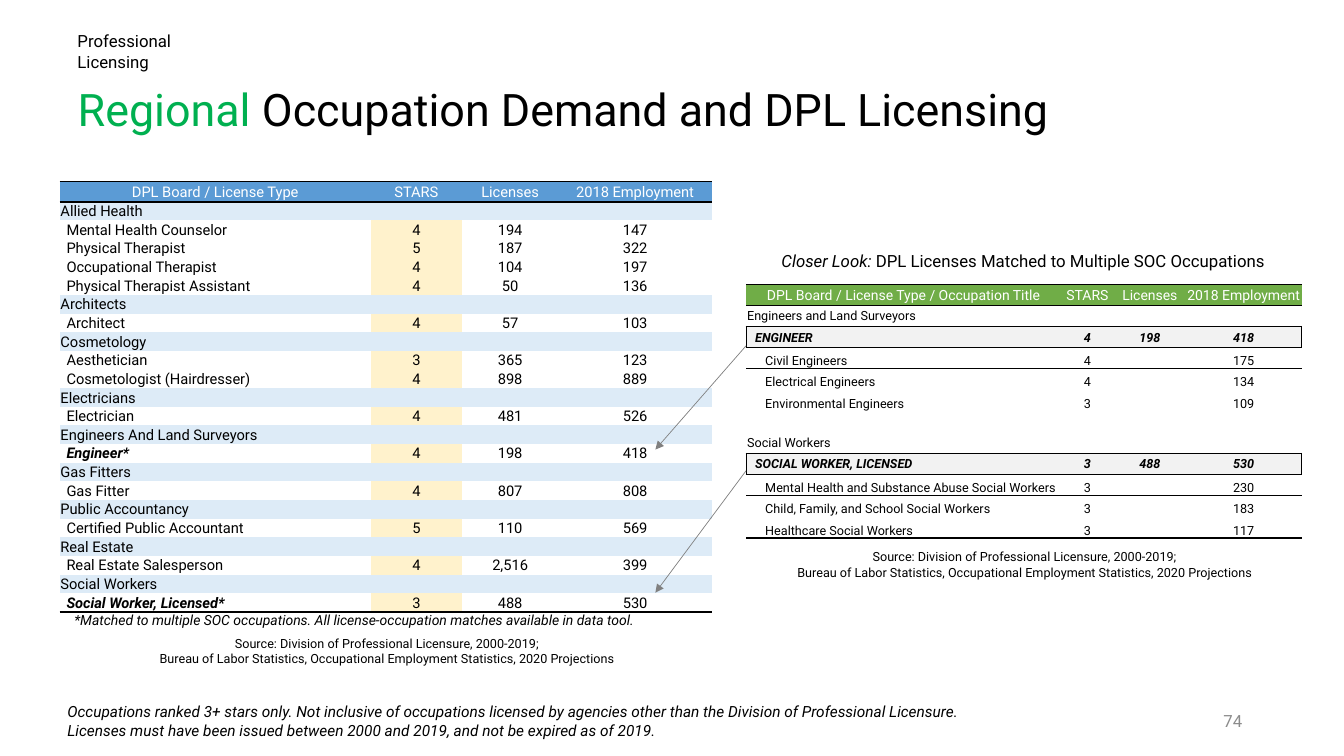
import lxml.etree
import pptx
import pptx.dml.color
import pptx.enum.shapes
import pptx.enum.text
import pptx.oxml.ns
import pptx.util

Inches = pptx.util.Inches
ALIGN = pptx.enum.text.PP_ALIGN
ANCHOR = pptx.enum.text.MSO_ANCHOR
FONT = "Roboto"
COLORS = {
    "black": "000000", "white": "FFFFFF", "highlight": "00B050", "number": "8C8C8C",
    "blue": "5B9BD5", "band": "DDEBF7", "stars": "FFF2CC", "green": "70AD47",
    "match": "F2F2F2", "arrow": "808080",
}
NO_STYLE = "{2D5ABB26-0587-4C30-8999-92F81FD0307C}"
SOURCE = [
    "Source: Division of Professional Licensure, 2000-2019;",
    "Bureau of Labor Statistics, Occupational Employment Statistics, 2020 Projections",
]
NOTES = [
    "Occupations ranked 3+ stars only. Not inclusive of occupations licensed by agencies "
    "other than the Division of Professional Licensure.",
    "Licenses must have been issued between 2000 and 2019, and not be expired as of 2019.",
]
BOARDS = {
    "Allied Health": [
        ("Mental Health Counselor", "4", "194", "147"),
        ("Physical Therapist", "5", "187", "322"),
        ("Occupational Therapist", "4", "104", "197"),
        ("Physical Therapist Assistant", "4", "50", "136"),
    ],
    "Architects": [("Architect", "4", "57", "103")],
    "Cosmetology": [
        ("Aesthetician", "3", "365", "123"),
        ("Cosmetologist (Hairdresser)", "4", "898", "889"),
    ],
    "Electricians": [("Electrician", "4", "481", "526")],
    "Engineers And Land Surveyors": [("Engineer*", "4", "198", "418")],
    "Gas Fitters": [("Gas Fitter", "4", "807", "808")],
    "Public Accountancy": [("Certified Public Accountant", "5", "110", "569")],
    "Real Estate": [("Real Estate Salesperson", "4", "2,516", "399")],
    "Social Workers": [("Social Worker, Licensed*", "3", "488", "530")],
}
CLOSER_ROWS = [
    ("header", "DPL Board / License Type / Occupation Title", "STARS", "Licenses", "2018 Employment"),
    ("group", "Engineers and Land Surveyors", "", "", ""),
    ("match", "ENGINEER", "4", "198", "418"),
    ("ruled", "Civil Engineers", "4", "", "175"),
    ("detail", "Electrical Engineers", "4", "", "134"),
    ("detail", "Environmental Engineers", "3", "", "109"),
    ("detail", "", "", "", ""),
    ("group", "Social Workers", "", "", ""),
    ("match", "SOCIAL WORKER, LICENSED", "3", "488", "530"),
    ("ruled", "Mental Health and Substance Abuse Social Workers", "3", "", "230"),
    ("detail", "Child, Family, and School Social Workers", "3", "", "183"),
    ("ruled", "Healthcare Social Workers", "3", "", "117"),
]


def rgb(name):
    return pptx.dml.color.RGBColor.from_string(COLORS[name])


def set_font(font, size, color="black", bold=False, italic=False):
    font.name, font.size = FONT, pptx.util.Pt(size)
    font.bold, font.italic = bold, italic
    font.color.rgb = rgb(color)


def add_text(page, box, lines, size, align=ALIGN.LEFT, color="black", italic=False):
    frame = page.shapes.add_textbox(*map(Inches, box)).text_frame
    frame.word_wrap = True
    frame.text = "\n".join(lines)
    for para in frame.paragraphs:
        para.alignment = align
        set_font(para.font, size, color, italic=italic)
    return frame


def add_borders(cell, sides, width):
    properties = cell._tc.get_or_add_tcPr()
    for index, side in enumerate("LRTB"):
        line = lxml.etree.Element(pptx.oxml.ns.qn(f"a:ln{side}"))
        if side in sides:
            line.set("w", str(pptx.util.Pt(width)))
            fill = lxml.etree.SubElement(line, pptx.oxml.ns.qn("a:solidFill"))
            lxml.etree.SubElement(fill, pptx.oxml.ns.qn("a:srgbClr"), val=COLORS["black"])
        else:
            line.set("w", "0")
            lxml.etree.SubElement(line, pptx.oxml.ns.qn("a:noFill"))
        properties.insert(index, line)


def fill_cell(cell, text, size, align, fill=None, indent=0.01, anchor=ANCHOR.MIDDLE,
              color="black", emphasis=False):
    cell.margin_left, cell.margin_right = Inches(indent), Inches(0.01)
    cell.margin_top, cell.margin_bottom = Inches(0.01), 0
    cell.vertical_anchor = anchor
    if fill:
        cell.fill.solid()
        cell.fill.fore_color.rgb = rgb(fill)
    else:
        cell.fill.background()
    para = cell.text_frame.paragraphs[0]
    para.alignment = align
    set_font(para.font, size, color, emphasis, emphasis)
    if text:
        para.add_run().text = text
    else:
        lxml.etree.SubElement(para._p, pptx.oxml.ns.qn("a:endParaRPr"), sz=str(size * 100).split(".")[0])


def add_grid(page, left, top, widths, heights, rows):
    box = map(Inches, (left, top, sum(widths), sum(heights)))
    frame = page.shapes.add_table(len(rows), len(widths), *box)
    table = frame.table
    table.first_row = table.horz_banding = False
    table._tbl.tblPr.find(pptx.oxml.ns.qn("a:tableStyleId")).text = NO_STYLE
    for column, width in zip(table.columns, widths):
        column.width = Inches(width)
    for row, height in zip(table.rows, heights):
        row.height = Inches(height)
    return table


def board_table(page, left, top):
    rows = [("header", "DPL Board / License Type", "STARS", "Licenses", "2018 Employment")]
    for board, licenses in BOARDS.items():
        rows.append(("group", board, "", "", ""))
        rows += [("license", *values) for values in licenses]
    heights = [0.2] + [4.02 / (len(rows) - 1)] * (len(rows) - 1)
    table = add_grid(page, left, top, [3.09, 0.9, 0.96, 1.52], heights, rows)
    for r, (kind, *values) in enumerate(rows):
        sides = "TB" if kind == "header" else "B" if r == len(rows) - 1 else ""
        for c, text in enumerate(values):
            fill = {"header": "blue", "group": "band"}.get(kind, "stars" if c == 1 else None)
            fill_cell(
                table.cell(r, c), text, 10.5,
                ALIGN.CENTER if c or kind == "header" else ALIGN.LEFT, fill,
                indent=0.07 if kind == "license" and c == 0 else 0.01,
                color="white" if kind == "header" else "black",
                emphasis=text.endswith("*"))
            add_borders(table.cell(r, c), sides, 1.5)


def closer_table(page, left, top):
    table = add_grid(page, left, top, [3.12, 0.53, 0.71, 1.15], [0.21] * len(CLOSER_ROWS), CLOSER_ROWS)
    indents = {"match": 0.09, "detail": 0.19, "ruled": 0.19}
    for r, (kind, *values) in enumerate(CLOSER_ROWS):
        for c, text in enumerate(values):
            fill_cell(
                table.cell(r, c), text, 10 if kind == "header" else 9,
                ALIGN.CENTER if c or kind == "header" else ALIGN.LEFT,
                {"header": "green", "match": "match"}.get(kind),
                indent=0.01 if c else indents.get(kind, 0.01),
                anchor=ANCHOR.BOTTOM if kind in ("detail", "ruled") else ANCHOR.MIDDLE,
                color="white" if kind == "header" else "black",
                emphasis=kind == "match")
            sides = {"header": "TB", "match": "TB", "ruled": "B"}.get(kind, "")
            if kind == "match":
                sides += {0: "L", 3: "R"}.get(c, "")
            add_borders(table.cell(r, c), sides, 1)


def heading(page, left, top):
    add_text(page, (left, top, 1.8, 0.3), ["Professional Licensing"], 12)
    title = page.shapes.title
    title.left, title.top, title.width, title.height = map(Inches, (left, top + 0.41, 12, 0.88))
    title.text_frame.vertical_anchor = ANCHOR.MIDDLE
    para = title.text_frame.paragraphs[0]
    para.alignment, para.line_spacing = ALIGN.LEFT, 0.9
    for text, color in (("Regional ", "highlight"), ("Occupation Demand and DPL Licensing", "black")):
        span = para.add_run()
        span.text = text
        set_font(span.font, 32, color)


def board_region(page, left, top):
    board_table(page, left, top)
    add_text(page, (left + 0.05, top + 4.22, 6.36, 0.27),
             ["*Matched to multiple SOC occupations. All license-occupation matches available in data tool."],
             10, italic=True)
    add_text(page, (left - 0.34, top + 4.46, 7.17, 0.4), SOURCE, 9, ALIGN.CENTER)


def closer_region(page, left, top):
    frame = add_text(page, (left + 0.02, top, 5.46, 0.3), [""], 12, ALIGN.CENTER)
    for text, italic in (("Closer Look: ", True), ("DPL Licenses Matched to Multiple SOC Occupations", False)):
        span = frame.paragraphs[0].add_run()
        span.text = text
        set_font(span.font, 12, italic=italic)
    closer_table(page, left, top + 0.38)
    add_text(page, (left + 0.02, top + 2.96, 5.48, 0.4), SOURCE, 9, ALIGN.CENTER)


def add_arrow(page, start, end):
    arrow = page.shapes.add_connector(
        pptx.enum.shapes.MSO_CONNECTOR.STRAIGHT, *map(Inches, start + end))
    arrow.line.color.rgb = rgb("arrow")
    arrow.line.width = pptx.util.Pt(0.5)
    lxml.etree.SubElement(arrow.line._get_or_add_ln(), pptx.oxml.ns.qn("a:tailEnd"), type="triangle")
    lxml.etree.SubElement(arrow._element.spPr, pptx.oxml.ns.qn("a:effectLst"))


def main():
    deck = pptx.Presentation()
    deck.slide_width, deck.slide_height = Inches(13.33), Inches(7.5)
    page = deck.slides.add_slide(deck.slide_layouts[5])
    heading(page, 0.67, 0.26)
    board_region(page, 0.59, 1.8)
    closer_region(page, 7.4, 2.44)
    add_arrow(page, (7.4, 3.43), (6.5, 4.46))
    add_arrow(page, (7.4, 4.67), (6.5, 5.88))
    add_text(page, (0.57, 6.92, 11.43, 0.47), NOTES, 11, italic=True)
    number = add_text(page, (9.42, 6.95, 3, 0.4), ["74"], 12, ALIGN.RIGHT, "number")
    number.vertical_anchor = ANCHOR.MIDDLE
    deck.save("out.pptx")


if __name__ == "__main__":
    main()
